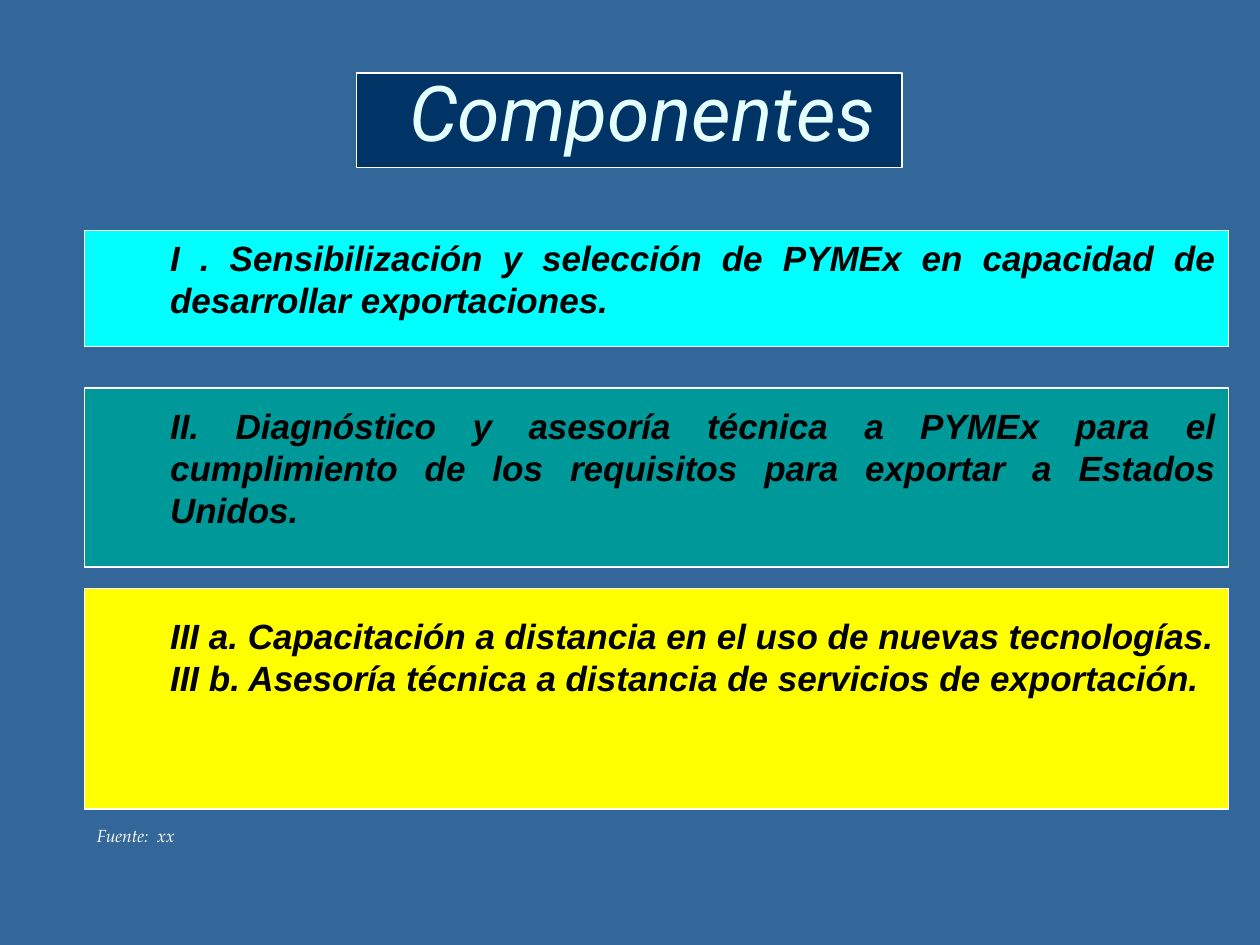
from pptx import Presentation
from pptx.dml.color import RGBColor
from pptx.enum.shapes import MSO_SHAPE
from pptx.enum.text import MSO_ANCHOR, MSO_AUTO_SIZE, PP_ALIGN
from pptx.util import Inches, Pt

RECT = MSO_SHAPE.RECTANGLE
CENTER, JUSTIFY, LEFT = PP_ALIGN.CENTER, PP_ALIGN.JUSTIFY, PP_ALIGN.LEFT

BACKGROUND = "336699"
TITLE = "Componentes"
SOURCE = "Fuente:  xx"
TITLE_BOX = (2.83, 0.58, 4.33, 0.75, "003366")
BAND_LEFT, BAND_WIDTH = 0.67, 9.08
TEXT_LEFT, TEXT_WIDTH = 0.75, 9
LINE_PITCH = 24  # points

# top, height, fill, paragraphs
COMPONENTS = [
    (1.83, 0.92, "00FFFF",
     ["I . Sensibilización y selección de PYMEx en capacidad de desarrollar exportaciones."]),
    (3.08, 1.42, "009999",
     ["II. Diagnóstico y asesoría técnica a PYMEx para el cumplimiento de los requisitos "
      "para exportar a Estados Unidos."]),
    (4.67, 1.75, "FFFF00",
     ["III a. Capacitación a distancia en el uso de nuevas tecnologías.",
      "III b. Asesoría técnica a distancia de servicios de exportación."]),
]


def rgb(color):
    return RGBColor.from_string(color)


def add_box(s, left, top, width, height, color):
    sp = s.shapes.add_shape(RECT, *map(Inches, (left, top, width, height)))
    sp.shadow.inherit = False
    sp.fill.solid()
    sp.fill.fore_color.rgb = rgb(color)
    sp.line.color.rgb = rgb("FFFFFF")
    sp.line.width = Pt(0.75)


def format_paragraph(p, font, size, color, align=LEFT, bold=False):
    p.alignment = align
    for r in p.runs:
        r.font.name, r.font.size = font, Pt(size)
        r.font.bold, r.font.italic = bold, True
        r.font.color.rgb = rgb(color)


def set_title(s):
    sp = s.shapes.title
    sp.left, sp.top, sp.width, sp.height = map(Inches, (TEXT_LEFT, 0.5, TEXT_WIDTH, 0.75))
    tf = sp.text_frame
    tf.text = TITLE
    tf.vertical_anchor = MSO_ANCHOR.MIDDLE
    tf.margin_right = Inches(0.4)
    format_paragraph(tf.paragraphs[0], "Roboto", 44, "E5FFFF", CENTER)
    s.shapes._spTree.append(sp._element)  # bring in front of its box


def add_source(s):
    tf = s.shapes.add_textbox(*map(Inches, (BAND_LEFT, 6.5, 0.83, 0.27))).text_frame
    tf.text = SOURCE
    tf.word_wrap = False
    tf.auto_size = MSO_AUTO_SIZE.SHAPE_TO_FIT_TEXT
    format_paragraph(tf.paragraphs[0], "TeX Gyre Pagella", 10, "FFFFFF")


def add_components_text(s):
    tf = s.shapes.add_textbox(*map(Inches, (TEXT_LEFT, 1.83, TEXT_WIDTH, 3.77))).text_frame
    tf.word_wrap = True
    tf.auto_size = MSO_AUTO_SIZE.SHAPE_TO_FIT_TEXT
    tf.margin_left = Inches(0.6)
    tf.text = "\n".join(line for *_, lines in COMPONENTS for line in lines)
    openers = {lines[0] for *_, lines in COMPONENTS[1:]}
    for p in tf.paragraphs:
        format_paragraph(p, "Arial", 20, "000000", JUSTIFY, bold=True)
        p.line_spacing = Pt(LINE_PITCH)
        p.space_before = Pt(2 * LINE_PITCH if p.text in openers else 0)


def main():
    prs = Presentation()
    prs.slide_width, prs.slide_height = Inches(10), Inches(7.5)
    s = prs.slides.add_slide(prs.slide_layouts[5])
    s.background.fill.solid()
    s.background.fill.fore_color.rgb = rgb(BACKGROUND)

    add_box(s, *TITLE_BOX)
    for top, height, color, _ in reversed(COMPONENTS):
        add_box(s, BAND_LEFT, top, BAND_WIDTH, height, color)
    set_title(s)
    add_source(s)
    add_components_text(s)
    prs.save("out.pptx")


if __name__ == "__main__":
    main()
